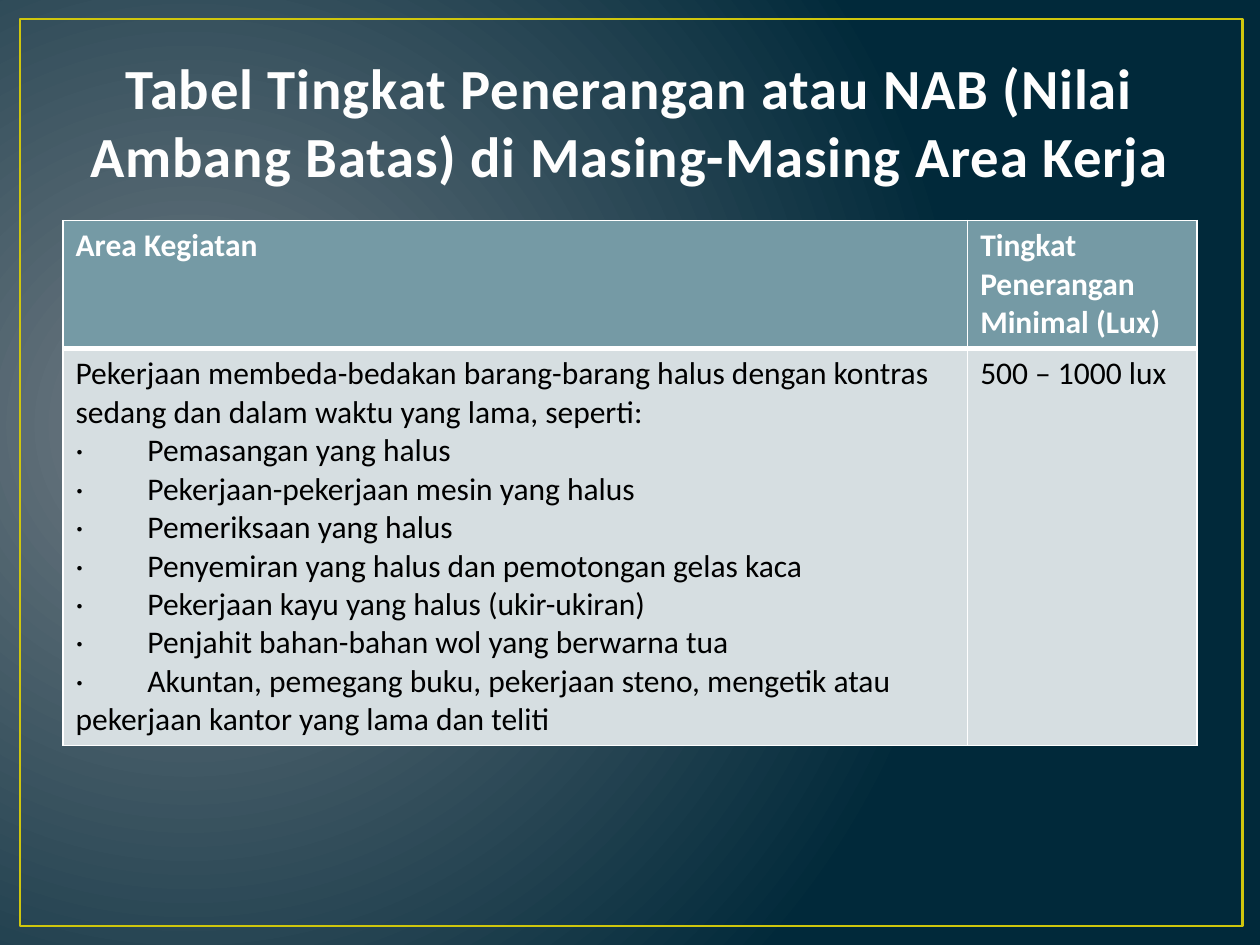
from lxml import etree
from pptx import Presentation
from pptx.dml.color import RGBColor
from pptx.enum.shapes import MSO_SHAPE
from pptx.enum.text import MSO_ANCHOR, PP_ALIGN
from pptx.oxml import parse_xml
from pptx.oxml.ns import qn
from pptx.util import Inches, Pt

COLORS = {
    "glow": "717C84", "night": "01293A", "frame": "CFC60D",
    "title": "FEFEFE", "title_outline": "384F55",
    "header_fill": "759AA5", "header_text": "FFFFFF",
    "body_fill": "D6DEE1", "body_text": "000000", "border": "FFFFFF",
}
FONT = "Calibri"
TITLE_ONLY = 5
BULLET_TAB = 0.57

TITLE = ("Tabel Tingkat Penerangan atau NAB (Nilai Ambang Batas) "
         "di Masing-Masing Area Kerja")
HEADERS = ["Area Kegiatan", "Tingkat Penerangan Minimal (Lux)"]
INTRO = ("Pekerjaan membeda-bedakan barang-barang halus dengan kontras sedang "
         "dan dalam waktu yang lama, seperti:")
ACTIVITIES = [
    "Pemasangan yang halus",
    "Pekerjaan-pekerjaan mesin yang halus",
    "Pemeriksaan yang halus",
    "Penyemiran yang halus dan pemotongan gelas kaca",
    "Pekerjaan kayu yang halus (ukir-ukiran)",
    "Penjahit bahan-bahan wol yang berwarna tua",
    "Akuntan, pemegang buku, pekerjaan steno, mengetik atau pekerjaan kantor "
    "yang lama dan teliti",
]
LEVEL = "500 – 1000 lux"
ROWS = [
    [[header] for header in HEADERS],
    [[INTRO] + [f"·\t{activity}" for activity in ACTIVITIES], [LEVEL]],
]
COLUMN_WIDTHS = [7.18, 1.82]
ROW_HEIGHTS = [1, 3.1]
# One line above, between and below the rows, in points
RULES = [1, 3, 1]


def rgb(name):
    return RGBColor.from_string(COLORS[name])


def solid_fill(parent, name):
    fill = etree.SubElement(parent, qn("a:solidFill"))
    etree.SubElement(fill, qn("a:srgbClr"), val=COLORS[name])


def paint_background(slide):
    """Fill the background with a glow that spreads from the left edge."""
    fill = slide.background.fill
    fill.gradient()
    for stop, name in zip(fill.gradient_stops, ("glow", "night")):
        stop.color.rgb = rgb(name)
    gradient = slide.background._cSld.find(".//" + qn("a:gradFill"))
    gradient.remove(gradient.find(qn("a:lin")))
    gradient.append(parse_xml(
        '<a:path xmlns:a="http://schemas.openxmlformats.org/drawingml/2006/main" '
        'path="circle"><a:fillToRect l="15000" t="50000" r="85000" b="60000"/></a:path>'))


def add_frame(slide):
    frame = slide.shapes.add_shape(
        MSO_SHAPE.RECTANGLE, Inches(0.16), Inches(0.15), Inches(9.7), Inches(7.2))
    frame.shadow.inherit = False
    frame.fill.background()
    frame.line.color.rgb = rgb("frame")
    frame.line.width = Pt(1.5)


def fill_title(slide):
    title = slide.shapes.title
    title.left, title.top = Inches(0.5), Inches(0.3)
    title.width, title.height = Inches(9), Inches(1.25)
    title.text_frame.vertical_anchor = MSO_ANCHOR.BOTTOM
    paragraph = title.text_frame.paragraphs[0]
    paragraph.alignment = PP_ALIGN.CENTER
    span = paragraph.add_run()
    span.text = TITLE
    span.font.name, span.font.size, span.font.bold = FONT, Pt(32.4), True
    span.font.color.rgb = rgb("title")
    properties = span.font._element
    properties.set("spc", "50")
    outline = etree.Element(qn("a:ln"), w=str(Pt(1.05)))
    solid_fill(outline, "title_outline")
    properties.insert(0, outline)


def add_borders(cell, widths):
    properties = cell._tc.get_or_add_tcPr()
    for side, width in widths.items():
        line = etree.SubElement(properties, qn(f"a:ln{side}"), w=str(Pt(width)))
        solid_fill(line, "border")


def add_tab_stop(paragraph):
    stops = etree.SubElement(paragraph._p.get_or_add_pPr(), qn("a:tabLst"))
    etree.SubElement(stops, qn("a:tab"), pos=str(Inches(BULLET_TAB)), algn="l")


def fill_cell(cell, lines, kind):
    cell.fill.solid()
    cell.fill.fore_color.rgb = rgb(f"{kind}_fill")
    cell.text = "\n".join(lines)
    for paragraph in cell.text_frame.paragraphs:
        if "\t" in paragraph.text:
            add_tab_stop(paragraph)
        font = paragraph.font
        font.name, font.size, font.bold = FONT, Pt(18), kind == "header"
        font.color.rgb = rgb(f"{kind}_text")


def add_lighting_table(slide):
    table = slide.shapes.add_table(
        len(ROWS), len(HEADERS), Inches(0.5), Inches(1.75),
        Inches(sum(COLUMN_WIDTHS)), Inches(sum(ROW_HEIGHTS))).table
    for column, width in zip(table.columns, COLUMN_WIDTHS):
        column.width = Inches(width)
    for row, height in zip(table.rows, ROW_HEIGHTS):
        row.height = Inches(height)
    for r, row in enumerate(ROWS):
        for c, lines in enumerate(row):
            cell = table.cell(r, c)
            add_borders(cell, {"L": 1, "R": 1, "T": RULES[r], "B": RULES[r + 1]})
            fill_cell(cell, lines, "body" if r else "header")


def main():
    deck = Presentation()
    deck.slide_width, deck.slide_height = Inches(10), Inches(7.5)
    slide = deck.slides.add_slide(deck.slide_layouts[TITLE_ONLY])
    paint_background(slide)
    add_frame(slide)
    fill_title(slide)
    add_lighting_table(slide)
    deck.save("out.pptx")


if __name__ == "__main__":
    main()
